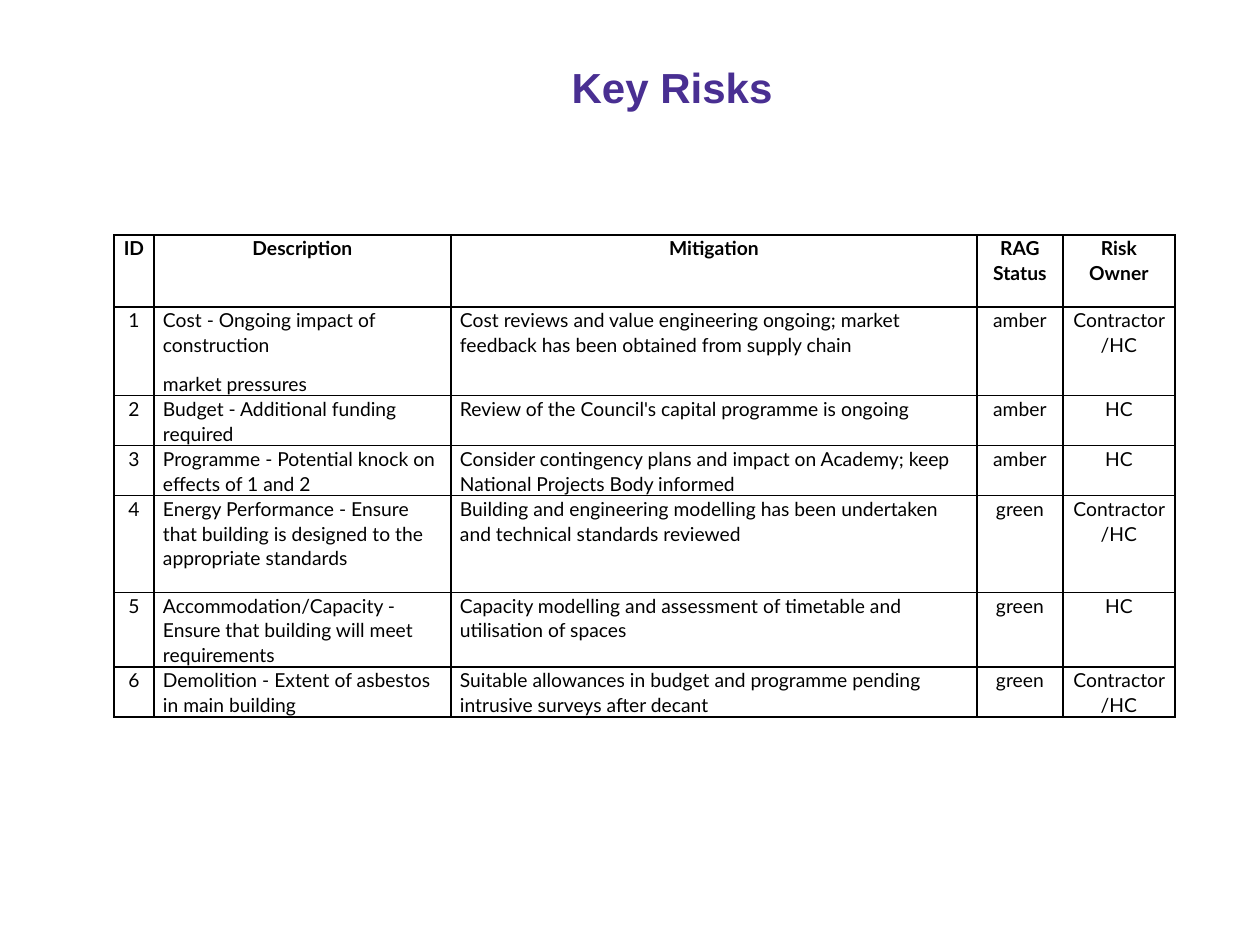
"""Build the Key Risks slide: a centred title above a bordered risk register."""
from lxml import etree
from pptx import Presentation
from pptx import util as u
from pptx.dml.color import RGBColor
from pptx.enum import text
from pptx.oxml.ns import qn

TITLE = "Key Risks"
HEADER = ("ID", "Description", "Mitigation", "RAG Status", "Risk Owner")
RISKS = [
    ("Cost - Ongoing impact of construction\nmarket pressures",
     "Cost reviews and value engineering ongoing; market feedback has been obtained from supply chain",
     "amber", "Contractor/HC"),
    ("Budget - Additional funding required",
     "Review of the Council's capital programme is ongoing",
     "amber", "HC"),
    ("Programme - Potential knock on effects of 1 and 2",
     "Consider contingency plans and impact on Academy; keep National Projects Body informed",
     "amber", "HC"),
    ("Energy Performance - Ensure that building is designed to the appropriate standards",
     "Building and engineering modelling has been undertaken and technical standards reviewed",
     "green", "Contractor/HC"),
    ("Accommodation/Capacity - Ensure that building will meet requirements",
     "Capacity modelling and assessment of timetable and utilisation of spaces",
     "green", "HC"),
    ("Demolition - Extent of asbestos in main building",
     "Suitable allowances in budget and programme pending intrusive surveys after decant",
     "green", "Contractor/HC"),
]
COLORS = {"title": "492F92", "text": "000000", "border": "000000"}
COL_WIDTHS = (40, 297, 526, 86, 112)
ROW_HEIGHTS = (72, 86, 48, 48, 97, 72, 48)
LEFT_COLUMNS = (1, 2)
SCALE = u.Inches(1) / 126


def px(n):
    return u.Emu(round(n * SCALE))


def format_font(font, name, size, color, bold):
    font.name, font.size, font.bold = name, u.Pt(size), bold
    font.color.rgb = RGBColor.from_string(COLORS[color])


def add_borders(cell):
    tc_pr = cell._tc.get_or_add_tcPr()
    for side in ("lnL", "lnR", "lnT", "lnB"):
        ln = etree.SubElement(tc_pr, qn(f"a:{side}"), w=str(u.Pt(1)))
        fill = etree.SubElement(ln, qn("a:solidFill"))
        etree.SubElement(fill, qn("a:srgbClr"), val=COLORS["border"])


def fill_cell(cell, value, bold, align):
    cell.margin_left = cell.margin_right = px(9)
    cell.margin_top = cell.margin_bottom = 0
    add_borders(cell)
    cell.fill.background()
    cell.text_frame.text = value
    for p in cell.text_frame.paragraphs:
        p.alignment = align
        p.line_spacing = 1.07
        p.space_after = u.Pt(8)
        for r in p.runs:
            format_font(r.font, "Lato", 11, "text", bold)


def add_title(s):
    sp = s.shapes.title
    sp.left, sp.top, sp.width, sp.height = px(105), px(55), px(1134), px(97)
    tf = sp.text_frame
    tf.text = TITLE
    tf.word_wrap = True
    tf.vertical_anchor = text.MSO_ANCHOR.TOP
    p = tf.paragraphs[0]
    p.alignment = text.PP_ALIGN.CENTER
    format_font(p.runs[0].font, "Arial", 24, "title", True)


def add_register(s):
    rows = [HEADER] + [(str(i), *risk) for i, risk in enumerate(RISKS, 1)]
    table = s.shapes.add_table(len(rows), len(HEADER), px(114), px(235),
                               px(sum(COL_WIDTHS)), px(sum(ROW_HEIGHTS))).table
    table.horz_banding = table.first_row = False
    for col, width in zip(table.columns, COL_WIDTHS):
        col.width = px(width)
    for i, (row, height) in enumerate(zip(table.rows, ROW_HEIGHTS)):
        row.height = px(height)
        for j, value in enumerate(rows[i]):
            left = i > 0 and j in LEFT_COLUMNS
            align = text.PP_ALIGN.LEFT if left else text.PP_ALIGN.CENTER
            fill_cell(table.cell(i, j), value, i == 0, align)


def main():
    prs = Presentation()
    prs.slide_width, prs.slide_height = px(1260), px(945)
    s = prs.slides.add_slide(prs.slide_layouts[5])
    add_title(s)
    add_register(s)
    prs.save("out.pptx")


if __name__ == "__main__":
    main()
